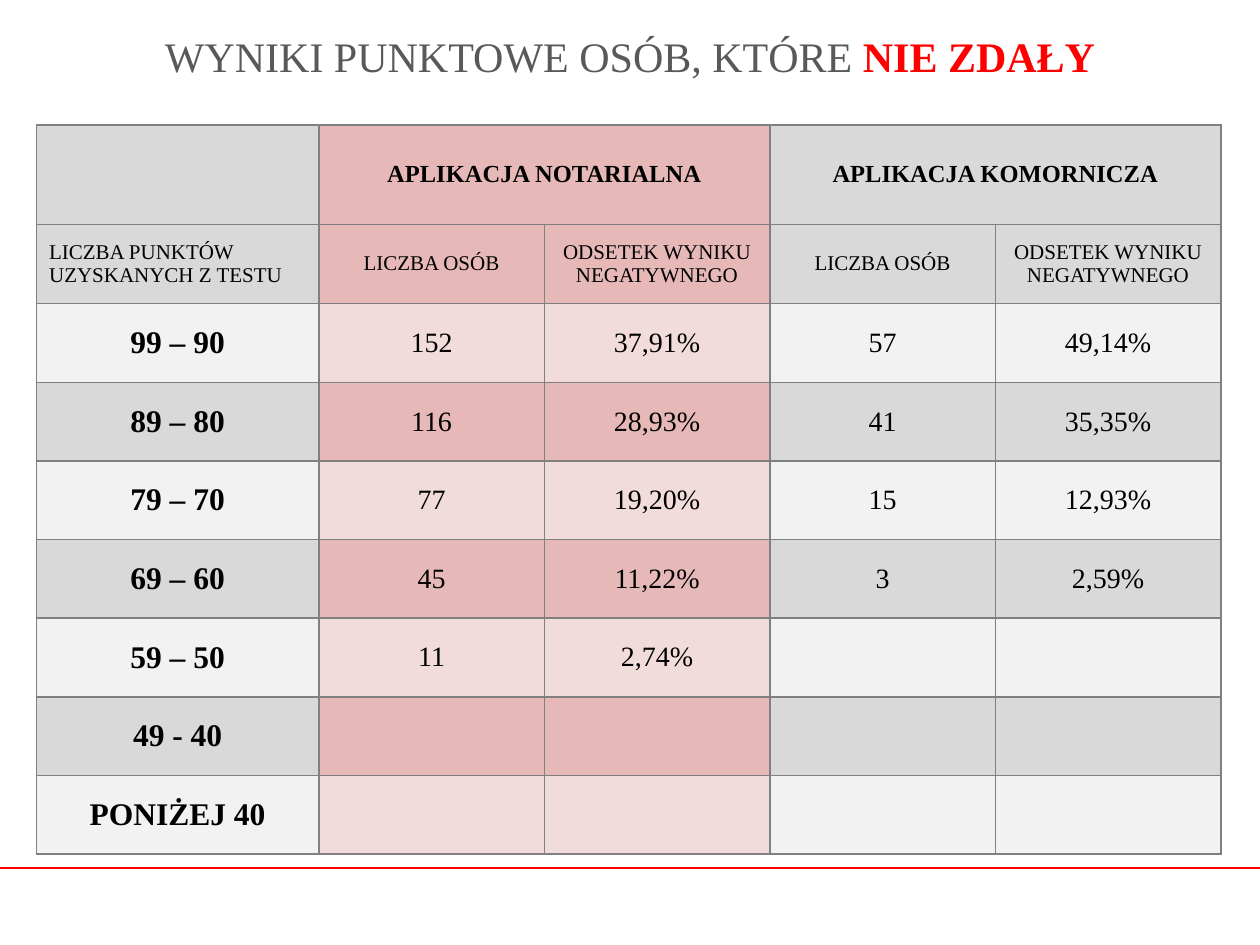
import pptx
import pptx.dml.color
import pptx.enum.shapes
import pptx.enum.text
import pptx.oxml
import pptx.oxml.ns
import pptx.util
from lxml import etree

Inches = pptx.util.Inches
Pt = pptx.util.Pt
ALIGN = pptx.enum.text.PP_ALIGN
MIDDLE = pptx.enum.text.MSO_ANCHOR.MIDDLE

FONT = "Times New Roman"
COLORS = {
    "title": "595959", "accent": "FF0000", "text": "000000", "border": "808080",
    "gray_dark": "D9D9D9", "gray_light": "F2F2F2",
    "pink_dark": "E6B9B8", "pink_light": "F2DCDB",
}
FORMATS = {
    "group": {"size": Pt(14), "bold": True},
    "header": {"size": Pt(12), "bold": False},
    "range": {"size": Pt(18), "bold": True},
    "value": {"size": Pt(16), "bold": False},
}
COLUMN_HUES = ["gray", "pink", "pink", "gray", "gray"]
COLUMN_WIDTHS = [2.24] + [1.79] * 4
HEADER_HEIGHTS = [0.79, 0.63]
ROWS = [
    ["", "APLIKACJA NOTARIALNA", "", "APLIKACJA KOMORNICZA", ""],
    ["LICZBA PUNKTÓW UZYSKANYCH Z TESTU"] + ["LICZBA OSÓB", "ODSETEK WYNIKU NEGATYWNEGO"] * 2,
    ["99 – 90", "152", "37,91%", "57", "49,14%"],
    ["89 – 80", "116", "28,93%", "41", "35,35%"],
    ["79 – 70", "77", "19,20%", "15", "12,93%"],
    ["69 – 60", "45", "11,22%", "3", "2,59%"],
    ["59 – 50", "11", "2,74%", "", ""],
    ["49 - 40", "", "", "", ""],
    ["PONIŻEJ 40", "", "", "", ""],
]


def rgb(name):
    """Return the named colour."""
    return pptx.dml.color.RGBColor.from_string(COLORS[name])


def add_run(p, text, color, fmt):
    """Add a run with the given colour and font attributes."""
    r = p.add_run()
    r.text = text
    r.font.color.rgb = rgb(color)
    for name, value in {"name": FONT, **fmt}.items():
        setattr(r.font, name, value)


def set_borders(cell):
    """Draw a one-point line on every side of a cell."""
    tc_pr = cell._tc.get_or_add_tcPr()
    for i, side in enumerate(["lnL", "lnR", "lnT", "lnB"]):
        tc_pr.insert(i, pptx.oxml.parse_xml(
            f'<a:{side} {pptx.oxml.ns.nsdecls("a")} w="{Pt(1)}"><a:solidFill>'
            f'<a:srgbClr val="{COLORS["border"]}"/></a:solidFill></a:{side}>'))


def place_title(s, left, top, width, height):
    """Place the title with its emphasised ending."""
    sp = s.shapes.title
    box = {"left": left, "top": top, "width": width, "height": height}
    for name, value in box.items():
        setattr(sp, name, Inches(value))
    tf = sp.text_frame
    tf.vertical_anchor = MIDDLE
    p = tf.paragraphs[0]
    p.alignment = ALIGN.CENTER
    add_run(p, "WYNIKI PUNKTOWE OSÓB, KTÓRE ", "title", {"size": Pt(24), "bold": False})
    add_run(p, "NIE ZDAŁY", "accent", {"size": Pt(24), "bold": True})


def fill_cell(cell, row, col, text):
    """Write and format one cell according to its row and column."""
    shade = "light" if row >= 2 and row % 2 == 0 else "dark"
    cell.fill.solid()
    cell.fill.fore_color.rgb = rgb(f"{COLUMN_HUES[col]}_{shade}")
    cell.vertical_anchor = MIDDLE
    set_borders(cell)
    if text:
        kind = ["group", "header"][row] if row < 2 else "value" if col else "range"
        p = cell.text_frame.paragraphs[0]
        p.alignment = ALIGN.LEFT if (row, col) == (1, 0) else ALIGN.CENTER
        add_run(p, text, "text", FORMATS[kind])


def place_table(s, left, top, width, height):
    """Place the table of scores, with equal rows below the headers."""
    frame = s.shapes.add_table(len(ROWS), len(COLUMN_WIDTHS),
                               Inches(left), Inches(top), Inches(width), Inches(height))
    table = frame.table
    table.first_row = table.horz_banding = False
    for column, column_width in zip(table.columns, COLUMN_WIDTHS):
        column.width = Inches(column_width)
    body_count = len(ROWS) - len(HEADER_HEIGHTS)
    body_height = (height - sum(HEADER_HEIGHTS)) / body_count
    for row, row_height in zip(table.rows, HEADER_HEIGHTS + [body_height] * body_count):
        row.height = Inches(row_height)
    for col in (1, 3):
        table.cell(0, col).merge(table.cell(0, col + 1))
    for i, texts in enumerate(ROWS):
        for j, text in enumerate(texts):
            fill_cell(table.cell(i, j), i, j, text)


def place_rule(s, left, top, width):
    """Draw the red line below the table."""
    sp = s.shapes.add_connector(pptx.enum.shapes.MSO_CONNECTOR.STRAIGHT, Inches(left),
                                Inches(top), Inches(left + width), Inches(top))
    sp.line.color.rgb = rgb("accent")
    sp.line.width = Pt(1)
    etree.SubElement(sp._element.spPr, pptx.oxml.ns.qn("a:effectLst"))


def main():
    """Build and save the slide."""
    prs = pptx.Presentation()
    prs.slide_width, prs.slide_height = Inches(10), Inches(7.5)
    s = prs.slides.add_slide(prs.slide_layouts.get_by_name("Title Only"))
    place_title(s, 0.12, 0.21, 9.76, 0.47)
    place_table(s, 0.29, 0.99, 9.4, 5.79)
    place_rule(s, 0, 6.89, 10)
    prs.save("out.pptx")


if __name__ == "__main__":
    main()
